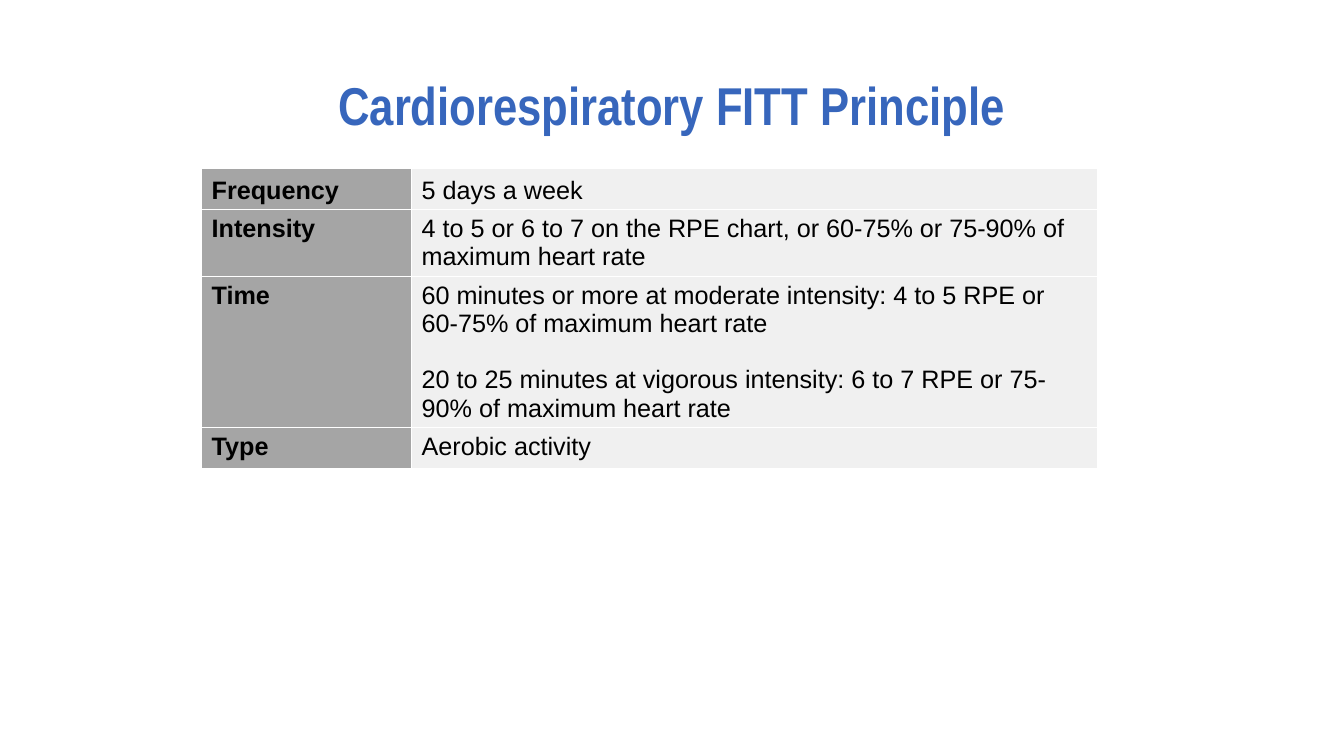
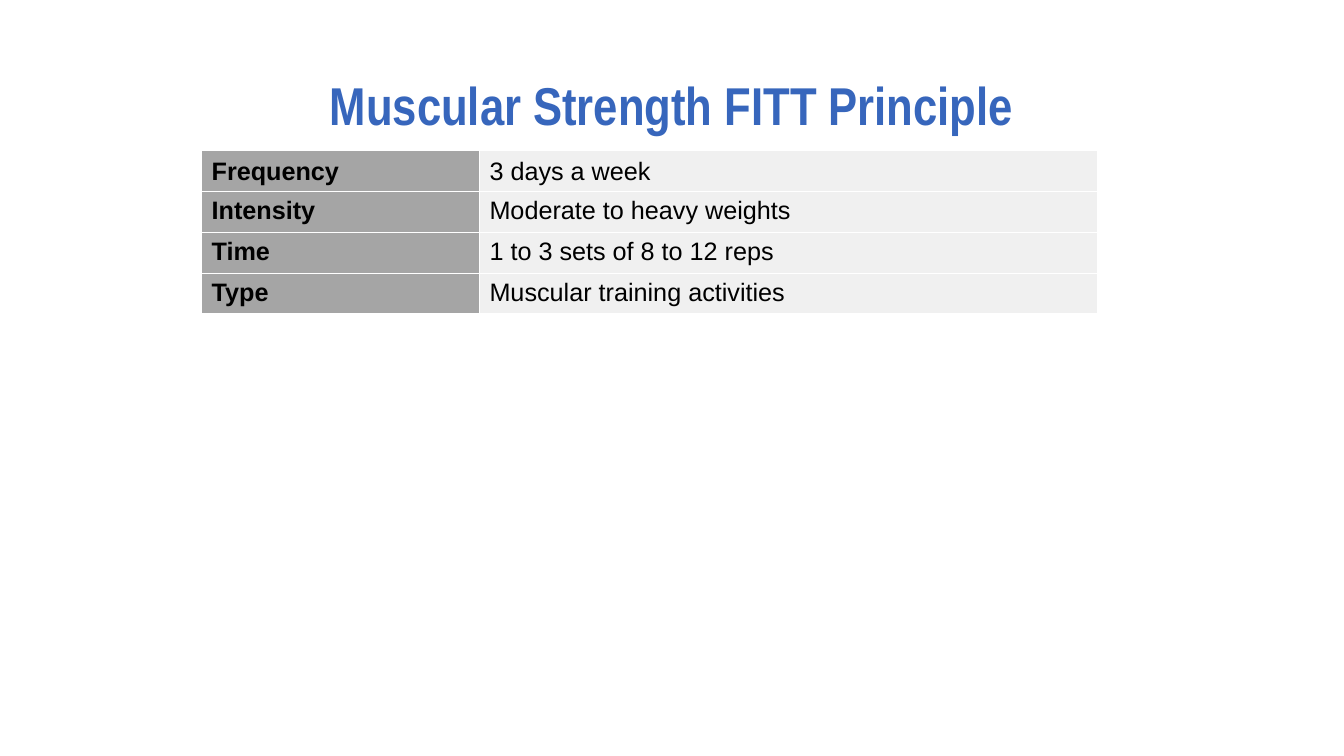
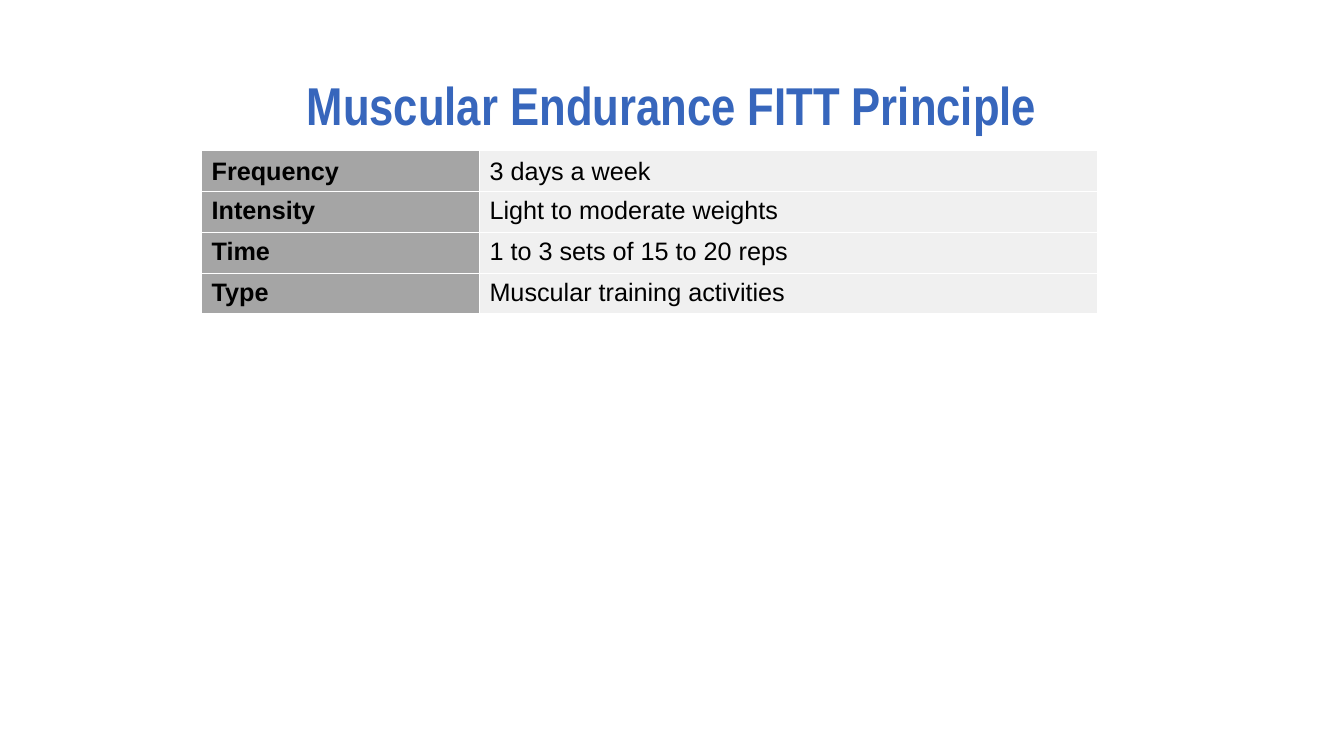
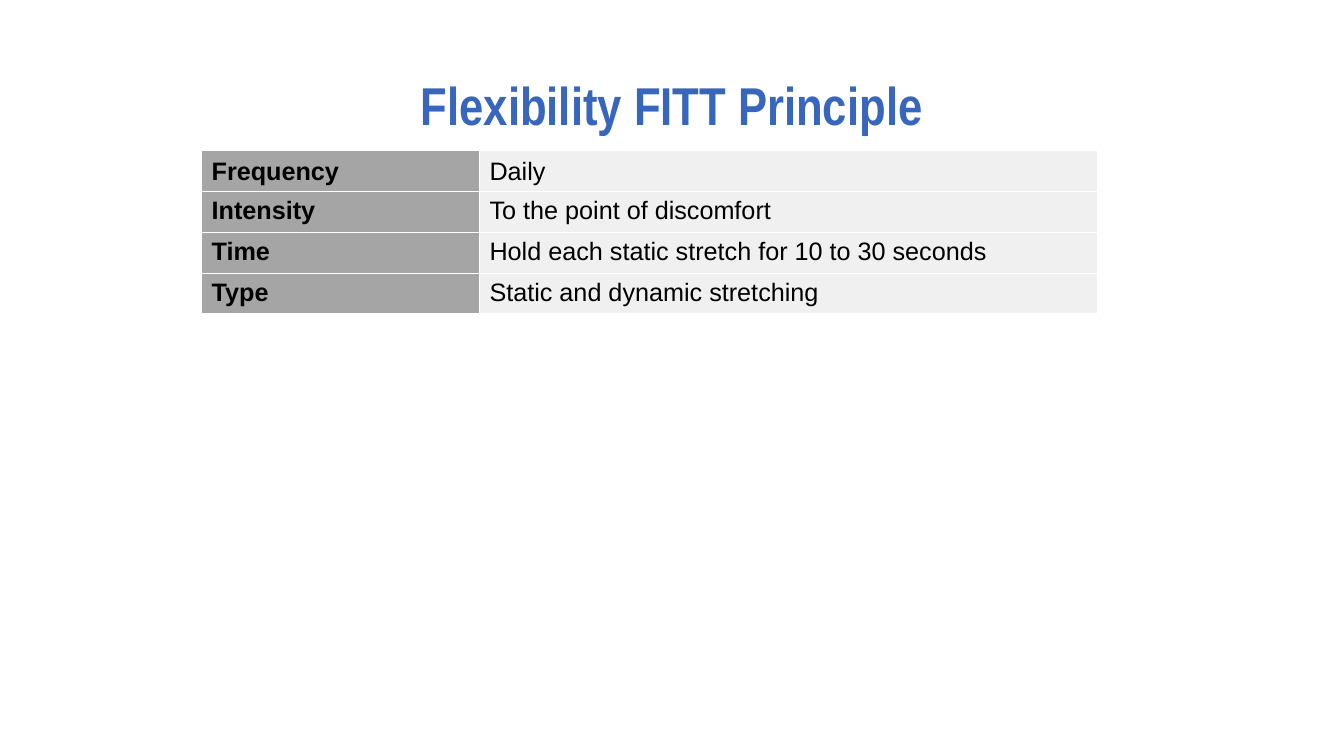
from lxml.etree import SubElement
from pptx import Presentation
from pptx.dml.color import RGBColor
from pptx.enum.text import MSO_ANCHOR, MSO_AUTO_SIZE, PP_ALIGN
from pptx.oxml.ns import qn
from pptx.util import Pt

COLORS = {
    "title": "3766BC",
    "text": "000000",
    "label": "A5A5A5",
    "value": "F0F0F0",
    "border": "FFFFFF",
}
SLIDE_WIDTH, SLIDE_HEIGHT = 960, 540
TABLE_LEFT, TABLE_WIDTH = 144, 640
ROW_HEIGHT = 29.2
LABELS = ("Frequency", "Intensity", "Time", "Type")

PRINCIPLES = [
    {
        "title": "Cardiorespiratory FITT Principle",
        "values": (
            "5 days a week",
            "4 to 5 or 6 to 7 on the RPE chart, or 60-75% or 75-90% of maximum heart rate",
            "60 minutes or more at moderate intensity: 4 to 5 RPE or 60-75% of maximum heart rate\n"
            "20 to 25 minutes at vigorous intensity: 6 to 7 RPE or 75-90% of maximum heart rate",
            "Aerobic activity",
        ),
        "top": 120.5,
        "label_width": 150,
        "row_heights": (ROW_HEIGHT, 47.5, 108, ROW_HEIGHT),
    },
    {
        "title": "Muscular Strength FITT Principle",
        "values": (
            "3 days a week",
            "Moderate to heavy weights",
            "1 to 3 sets of 8 to 12 reps",
            "Muscular training activities",
        ),
    },
    {
        "title": "Muscular Endurance FITT Principle",
        "values": (
            "3 days a week",
            "Light to moderate weights",
            "1 to 3 sets of 15 to 20 reps",
            "Muscular training activities",
        ),
    },
    {
        "title": "Flexibility FITT Principle",
        "values": (
            "Daily",
            "To the point of discomfort",
            "Hold each static stretch for 10 to 30 seconds",
            "Static and dynamic stretching",
        ),
    },
]


def rgb(name):
    return RGBColor.from_string(COLORS[name])


class Deck:
    def __init__(self):
        self.presentation = Presentation()
        self.presentation.slide_width = Pt(SLIDE_WIDTH)
        self.presentation.slide_height = Pt(SLIDE_HEIGHT)
        self.slide = None

    def add_slide(self, title, values, **table_layout):
        title_only = self.presentation.slide_layouts[5]
        self.slide = self.presentation.slides.add_slide(title_only)
        self.title(title)
        self.fitt_table(values, **table_layout)

    def style_font(self, font, face, size, color, bold):
        font.name = face
        font.size = Pt(size)
        font.color.rgb = rgb(color)
        font.bold = bold

    def title(self, text):
        heading = self.slide.shapes.title
        heading.left, heading.top = Pt(0), Pt(44)
        heading.width, heading.height = Pt(SLIDE_WIDTH), Pt(67)
        frame = heading.text_frame
        frame.text = text
        frame.auto_size = MSO_AUTO_SIZE.NONE
        frame.word_wrap = True
        frame.vertical_anchor = MSO_ANCHOR.MIDDLE
        frame.margin_left = frame.margin_right = Pt(0)
        frame.margin_top = frame.margin_bottom = Pt(0)
        paragraph = frame.paragraphs[0]
        paragraph.alignment = PP_ALIGN.CENTER
        paragraph.line_spacing = 0.9
        self.style_font(paragraph.runs[0].font, "Arial Narrow", 38, "title", True)

    def fitt_table(self, values, top=107.5, label_width=198.5,
                   row_heights=(ROW_HEIGHT,) * len(LABELS)):
        table = self.slide.shapes.add_table(
            len(LABELS), 2, Pt(TABLE_LEFT), Pt(top),
            Pt(TABLE_WIDTH), Pt(sum(row_heights))).table
        table.first_row = table.horz_banding = False
        table.columns[0].width = Pt(label_width)
        table.columns[1].width = Pt(TABLE_WIDTH - label_width)
        for index, (label, value) in enumerate(zip(LABELS, values)):
            table.rows[index].height = Pt(row_heights[index])
            anchor = MSO_ANCHOR.BOTTOM if index == 0 else MSO_ANCHOR.TOP
            self.cell(table.cell(index, 0), label, "label", anchor, True)
            self.cell(table.cell(index, 1), value, "value", anchor, False)

    def cell(self, cell, text, fill, anchor, bold):
        self.cell_borders(cell)
        cell.fill.solid()
        cell.fill.fore_color.rgb = rgb(fill)
        cell.vertical_anchor = anchor
        cell.text_frame.text = text
        for index, paragraph in enumerate(cell.text_frame.paragraphs):
            if index:
                paragraph.space_before = Pt(20.25)
            self.style_font(paragraph.runs[0].font, "Arial", 18, "text", bold)

    def cell_borders(self, cell):
        properties = cell._tc.get_or_add_tcPr()
        for side in ("a:lnL", "a:lnR", "a:lnT", "a:lnB"):
            line = SubElement(properties, qn(side), w=str(Pt(1)))
            solid = SubElement(line, qn("a:solidFill"))
            SubElement(solid, qn("a:srgbClr"), val=COLORS["border"])


def main():
    deck = Deck()
    for principle in PRINCIPLES:
        deck.add_slide(**principle)
    deck.presentation.save("out.pptx")


if __name__ == "__main__":
    main()
